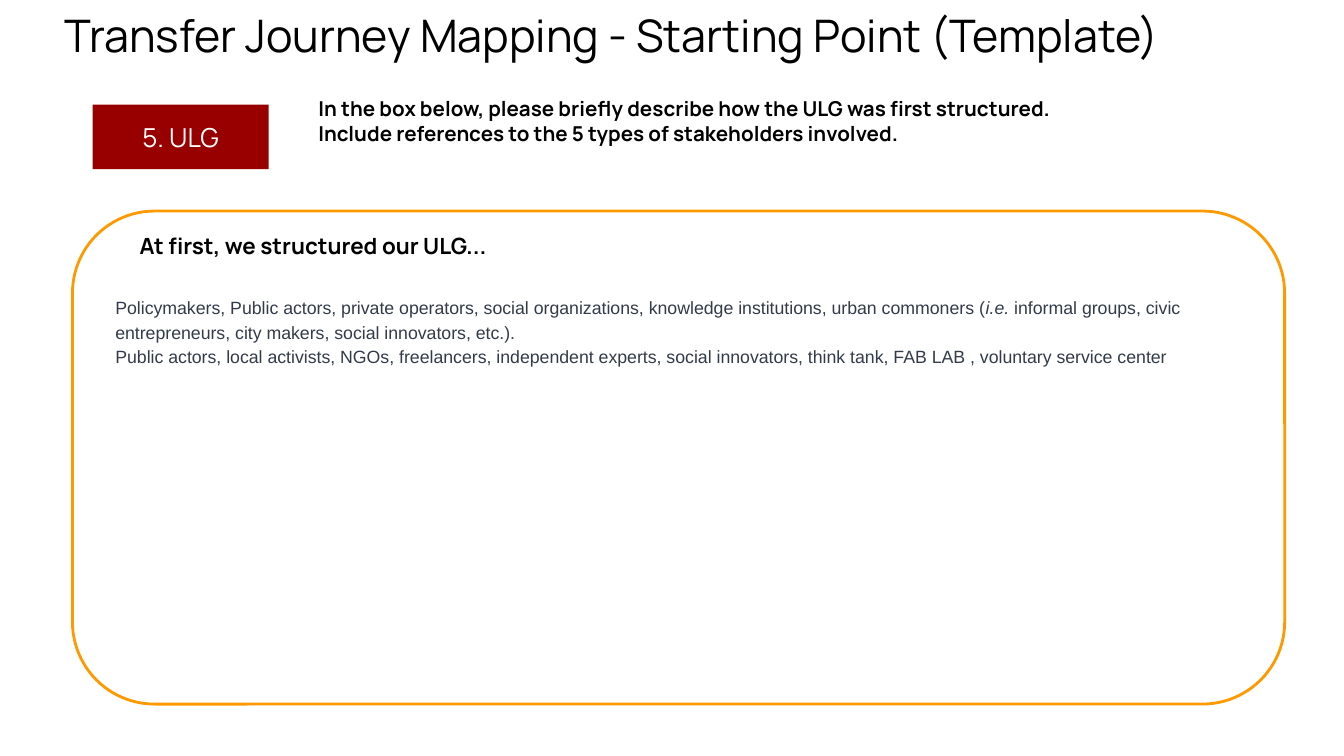
from pptx import Presentation
from pptx.dml.color import RGBColor
from pptx.enum.shapes import MSO_SHAPE as Preset
from pptx.enum.text import MSO_ANCHOR as Anchor, MSO_AUTO_SIZE as AutoSize, PP_ALIGN as Align
from pptx.util import Cm, Pt

BLACK = RGBColor(0x00, 0x00, 0x00)
WHITE = RGBColor(0xFF, 0xFF, 0xFF)
DARK_RED = RGBColor(0x98, 0x00, 0x00)
ORANGE = RGBColor(0xFF, 0x99, 0x00)
SLATE = RGBColor(0x32, 0x3B, 0x4A)

TITLE_FONT = {"name": "Manrope", "size": Pt(24), "bold": False}
LABEL_FONT = {"name": "Manrope", "size": Pt(14)}
PROMPT_FONT = {"name": "Manrope", "size": Pt(11), "bold": True}
LEAD_FONT = {"name": "Manrope", "size": Pt(12), "bold": True}
ANSWER_FONT = {"name": "Arial", "size": Pt(9.5)}

# Each paragraph is a list of (text, italic) runs.
STAKEHOLDERS = [
    [
        ("Policymakers, Public actors, private operators, social organizations, "
         "knowledge institutions, urban commoners (", False),
        ("i.e. ", True),
        ("informal groups, civic entrepreneurs, city makers, social innovators, etc.).", False),
    ],
    [
        ("Public actors, local activists, NGOs, freelancers, independent experts, "
         "social innovators, think tank, FAB LAB , voluntary service center", False),
    ],
]


def write(shape, paragraphs, font, color, align=Align.LEFT, anchor=Anchor.TOP, spacing=1.0):
    """Fill a shape with paragraphs of (text, italic) runs in one format."""
    frame = shape.text_frame
    frame_format = {
        "word_wrap": True, "auto_size": AutoSize.NONE, "vertical_anchor": anchor,
        "margin_left": Cm(0.25), "margin_right": Cm(0.25),
        "margin_top": Cm(0.25), "margin_bottom": Cm(0.25),
    }
    for key, value in frame_format.items():
        setattr(frame, key, value)
    for index, runs in enumerate(paragraphs):
        paragraph = frame.add_paragraph() if index else frame.paragraphs[0]
        paragraph.alignment = align
        paragraph.line_spacing = spacing
        paragraph.space_before = Pt(0)
        for text, italic in runs:
            run = paragraph.add_run()
            run.text = text
            for key, value in {**font, "italic": italic}.items():
                setattr(run.font, key, value)
            run.font.color.rgb = color


def place_title(slide, left, top, width, height):
    title = slide.shapes.title
    box = {"left": left, "top": top, "width": width, "height": height}
    for key, value in box.items():
        setattr(title, key, Cm(value))
    write(title, [[("Transfer Journey Mapping - Starting Point (Template)", False)]],
          TITLE_FONT, BLACK)


def add_text(slide, box, paragraphs, font, color, **layout):
    write(slide.shapes.add_textbox(*map(Cm, box)), paragraphs, font, color, **layout)


def add_prompt(slide, left, top, width, height):
    """Section label with the instruction to its right."""
    label = slide.shapes.add_shape(
        Preset.RECTANGLE, Cm(left), Cm(top + 0.41), Cm(3.33), Cm(1.22))
    label.shadow.inherit = False
    label.fill.solid()
    label.fill.fore_color.rgb = DARK_RED
    label.line.fill.background()
    write(label, [[("5. ULG", False)]], LABEL_FONT, WHITE, Align.CENTER, Anchor.MIDDLE)

    instruction = ("In the box below, please briefly describe how the ULG was first structured. "
                   "Include references to the 5 types of stakeholders involved.")
    add_text(slide, (left + 4.02, top, width - 4.02, height),
             [[(instruction, False)]], PROMPT_FONT, BLACK)


def add_answer(slide, left, top, width, height):
    """Rounded frame holding a lead-in line and the stakeholder text."""
    frame = slide.shapes.add_shape(
        Preset.ROUNDED_RECTANGLE, Cm(left), Cm(top), Cm(width), Cm(height))
    frame.shadow.inherit = False
    frame.fill.background()
    frame.line.color.rgb = ORANGE
    frame.line.width = Pt(1.5)

    add_text(slide, (left + 1.02, top + 0.15, 9.96, 1),
             [[("At first, we structured our ULG...", False)]], LEAD_FONT, BLACK)
    add_text(slide, (left + 0.56, top + 1.32, width - 1.27, height - 2.03),
             STAKEHOLDERS, ANSWER_FONT, SLATE, spacing=1.15)


def main():
    deck = Presentation()
    deck.slide_width, deck.slide_height = Cm(25.4), Cm(14.29)
    slide = deck.slides.add_slide(deck.slide_layouts[5])
    place_title(slide, 0.97, -0.1, 23.19, 1.9)
    add_prompt(slide, 1.75, 1.57, 18.42, 2.16)
    add_answer(slide, 1.37, 3.99, 22.91, 9.32)
    deck.save("out.pptx")


if __name__ == "__main__":
    main()
